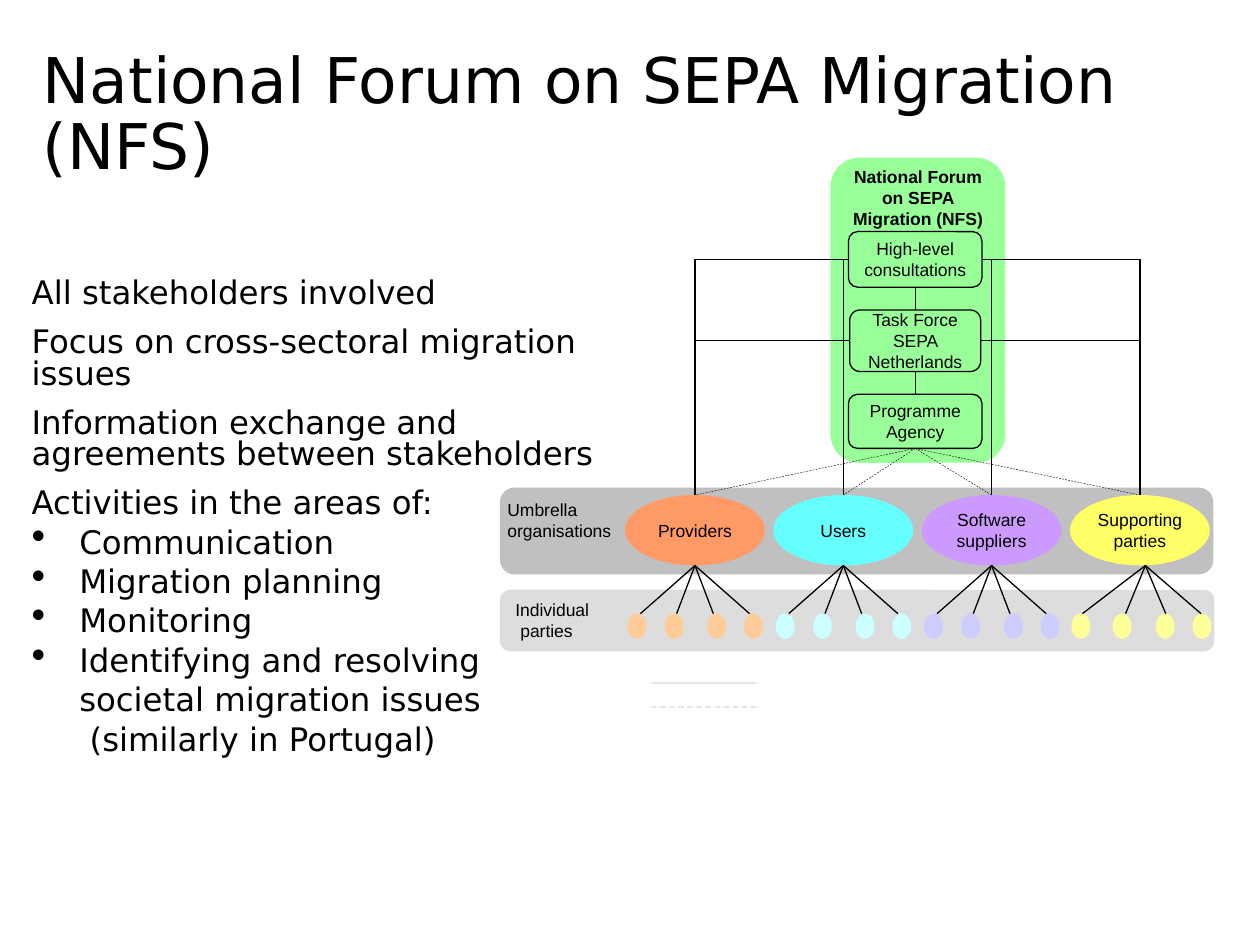
import pptx
import pptx.dml.color
import pptx.enum.dml
import pptx.enum.shapes
import pptx.enum.text
import pptx.oxml
import pptx.oxml.ns
import pptx.util
from pptx.util import Cm

SHAPES = pptx.enum.shapes.MSO_SHAPE
ALIGN = pptx.enum.text.PP_ALIGN
ANCHOR = pptx.enum.text.MSO_ANCHOR
TOP, LEFT, BOTTOM, RIGHT = range(4)


def color(value):
    return pptx.dml.color.RGBColor.from_string(value)


def add_child(parent, tag, **attributes):
    child = pptx.oxml.parse_xml(f"<a:{tag} {pptx.oxml.ns.nsdecls('a')}/>")
    for name, value in attributes.items():
        child.set(name, str(value))
    parent.append(child)


class ForumSlide:
    """The current slide together with its text and line style."""

    ink = "000000"
    heading_font = "DejaVu Sans"
    diagram_font = "Arial"
    diagram_size = 10
    line_width = 0.75

    def __init__(self, slide):
        self.slide = slide
        self.shapes = slide.shapes

    def run(self, paragraph, text, font, size, bold=False):
        run = paragraph.add_run()
        run.text = text
        run.font.name = font
        run.font.size = pptx.util.Pt(size)
        run.font.bold = bold
        run.font.color.rgb = color(self.ink)

    def frame(self, shape, insets, anchor):
        frame = shape.text_frame
        frame.word_wrap = True
        frame.vertical_anchor = anchor
        (frame.margin_left, frame.margin_top,
         frame.margin_right, frame.margin_bottom) = [Cm(inset) for inset in insets]
        return frame

    def indent(self, paragraph, left, first=0):
        properties = paragraph._p.get_or_add_pPr()
        properties.set("marL", str(Cm(left)))
        properties.set("indent", str(Cm(first)))
        return properties

    def title(self, text, x, y, width, height):
        title = self.shapes.title
        title.left, title.top, title.width, title.height = map(Cm, (x, y, width, height))
        paragraph = self.frame(title, (0, 0, 0, 0), ANCHOR.TOP).paragraphs[0]
        paragraph.alignment = ALIGN.LEFT
        paragraph.line_spacing = pptx.util.Pt(37.5)
        self.run(paragraph, text, self.heading_font, 36)

    def outline(self, points, activities, remark, x, y, width, height):
        box = self.shapes.add_textbox(*map(Cm, (x, y, width, height)))
        frame = self.frame(box, (0, 0, 0, 0), ANCHOR.TOP)
        for i, text in enumerate(points + activities + [remark]):
            paragraph = frame.paragraphs[0] if i == 0 else frame.add_paragraph()
            is_point = i < len(points)
            if text in activities:
                properties = self.indent(paragraph, 0.96, -0.96)
                add_child(properties, "buSzPct", val=125000)
                add_child(properties, "buChar", char="•")
            elif text == remark:
                self.indent(paragraph, 2.13, -0.96)
            paragraph.line_spacing = pptx.util.Pt(18 if is_point else 22.5)
            paragraph.space_before = pptx.util.Pt(10 if is_point and i else 0)
            self.run(paragraph, text, self.heading_font, 18.5)

    def label(self, shape, lines, insets=(0, 0, 0, 0), anchor=ANCHOR.MIDDLE,
              align=ALIGN.CENTER, bold=False, step=0):
        """Write the lines into the shape, each indented by step more than the last."""
        frame = self.frame(shape, insets, anchor)
        for i, line in enumerate(lines):
            paragraph = frame.paragraphs[0] if i == 0 else frame.add_paragraph()
            paragraph.alignment = align
            if i and step:
                self.indent(paragraph, i * step)
            self.run(paragraph, line, self.diagram_font, self.diagram_size, bold)

    def shape(self, kind, x, y, width, height, fill=None):
        shape = self.shapes.add_shape(kind, *map(Cm, (x, y, width, height)))
        shape.shadow.inherit = False
        if fill:
            shape.fill.solid()
            shape.fill.fore_color.rgb = color(fill)
            shape.line.fill.background()
        else:
            shape.fill.background()
            shape.line.color.rgb = color(self.ink)
            shape.line.width = pptx.util.Pt(self.line_width)
        return shape

    def caption(self, text, x, y, width, height):
        box = self.shapes.add_textbox(*map(Cm, (x, y, width, height)))
        self.label(box, [text], (0.25, 0.13, 0.25, 0.13), ANCHOR.TOP, ALIGN.LEFT)

    def line(self, x1, y1, x2, y2, start=None, end=None, width=line_width,
             stroke=ink, dashed=False):
        """Draw a straight line; start and end are (shape, side) pairs to join."""
        line = self.shapes.add_connector(
            pptx.enum.shapes.MSO_CONNECTOR.STRAIGHT, *map(Cm, (x1, y1, x2, y2)))
        if start:
            line.begin_connect(*start)
        if end:
            line.end_connect(*end)
        line.line.color.rgb = color(stroke)
        line.line.width = pptx.util.Pt(width)
        if dashed:
            line.line.dash_style = pptx.enum.dml.MSO_LINE.DASH
        add_child(line._element.spPr, "effectLst")


# Name, umbrella colour, member colour, spoke origin, spoke ends, member centres
SPOKES = (-1.1, -0.37, 0.37, 1.1)
MEMBERS = (-1.17, -0.42, 0.44, 1.18)
PARTIES = [
    ("Providers", "FF9966", "FFCC99", 0, SPOKES, MEMBERS),
    ("Users", "66FFFF", "CCFFFF", 0, SPOKES, MEMBERS),
    ("Software suppliers", "CC99FF", "CCCCFF", 0, SPOKES, MEMBERS),
    ("Supporting parties", "FFFF66", "FFFF99", 0.11,
     (-1.16, -0.29, 0.52, 1.23), (-1.19, -0.36, 0.51, 1.25)),
]
BODIES = [  # text, top, width, height
    ("High-level consultations", 4.67, 2.69, 1.12),
    ("Task Force SEPA Netherlands", 6.25, 2.64, 1.24),
    ("Programme Agency", 7.95, 2.69, 1.09),
]
FORUM_X = 18.45
PARTY_X = [14.01 + 2.99 * i for i in range(len(PARTIES))]
PARTY_TOP, PARTY_WIDTH, PARTY_HEIGHT = 9.98, 2.82, 1.42
MEMBER_TOP, MEMBER_WIDTH, MEMBER_HEIGHT = 12.37, 0.38, 0.51


def draw_forum(page):
    page.shape(SHAPES.ROUNDED_RECTANGLE, 10.08, 9.83, 14.38, 1.75, "C0C0C0")
    forum = page.shape(SHAPES.ROUNDED_RECTANGLE, 16.74, 3.18, 3.53, 6.15, "99FF99")
    page.label(forum, ["National Forum on SEPA Migration (NFS)"],
               (0.25, 0, 0.25, 0.13), ANCHOR.TOP, bold=True)
    individual = page.shape(SHAPES.ROUNDED_RECTANGLE, 10.08, 11.89, 14.4, 1.24, "DDDDDD")
    page.label(individual, ["Individual", "parties"], (0.25, 0.13, 0.25, 0.13),
               ANCHOR.TOP, ALIGN.LEFT, step=0.1)

    bodies = []
    for text, top, width, height in BODIES:
        body = page.shape(SHAPES.ROUNDED_RECTANGLE, FORUM_X - width / 2, top, width, height)
        page.label(body, [text])
        bodies.append(body)
    for upper, lower in zip(bodies, bodies[1:]):
        page.line(FORUM_X, 0, FORUM_X, 0, (upper, BOTTOM), (lower, TOP))
    for body, (_, top, _, height) in list(zip(bodies, BODIES))[:2]:
        middle = top + height / 2
        for side, x in ((LEFT, PARTY_X[0]), (RIGHT, PARTY_X[-1])):
            page.line(FORUM_X, middle, x, middle, (body, side))
    return bodies[-1]


def draw_parties(page, agency):
    consultation_y = BODIES[0][1] + BODIES[0][3] / 2
    for x, (name, fill, member_fill, origin, spokes, members) in zip(PARTY_X, PARTIES):
        page.line(FORUM_X, 0, x, PARTY_TOP, (agency, BOTTOM), width=0.25, dashed=True)
        page.line(x, PARTY_TOP, x, consultation_y)
        umbrella = page.shape(SHAPES.OVAL, x - PARTY_WIDTH / 2, PARTY_TOP,
                              PARTY_WIDTH, PARTY_HEIGHT, fill)
        page.label(umbrella, [name])
        for spoke, member in zip(spokes, members):
            page.shape(SHAPES.OVAL, x + member - MEMBER_WIDTH / 2, MEMBER_TOP,
                       MEMBER_WIDTH, MEMBER_HEIGHT, member_fill)
            page.line(x + origin, PARTY_TOP + PARTY_HEIGHT, x + spoke, MEMBER_TOP)


def main():
    deck = pptx.Presentation()
    deck.slide_width, deck.slide_height = Cm(25.4), Cm(19.05)
    page = ForumSlide(deck.slides.add_slide(deck.slide_layouts.get_by_name("Title Only")))
    page.title("National Forum on SEPA Migration (NFS)", 0.86, 1.02, 23.24, 2.69)
    page.outline(
        ["All stakeholders involved",
         "Focus on cross-sectoral migration issues",
         "Information exchange and agreements between stakeholders",
         "Activities in the areas of:"],
        ["Communication", "Migration planning", "Monitoring",
         "Identifying and resolving societal migration issues"],
        "(similarly in Portugal)", 0.64, 5.64, 11.63, 10.13)
    draw_parties(page, draw_forum(page))
    page.caption("Umbrella organisations", 9.98, 9.93, 2.74, 1.12)
    for y, dashed in ((13.77, False), (14.25, True)):
        page.line(13.13, y, 15.24, y, stroke="E7E6E6", dashed=dashed)
    deck.save("out.pptx")


if __name__ == "__main__":
    main()
